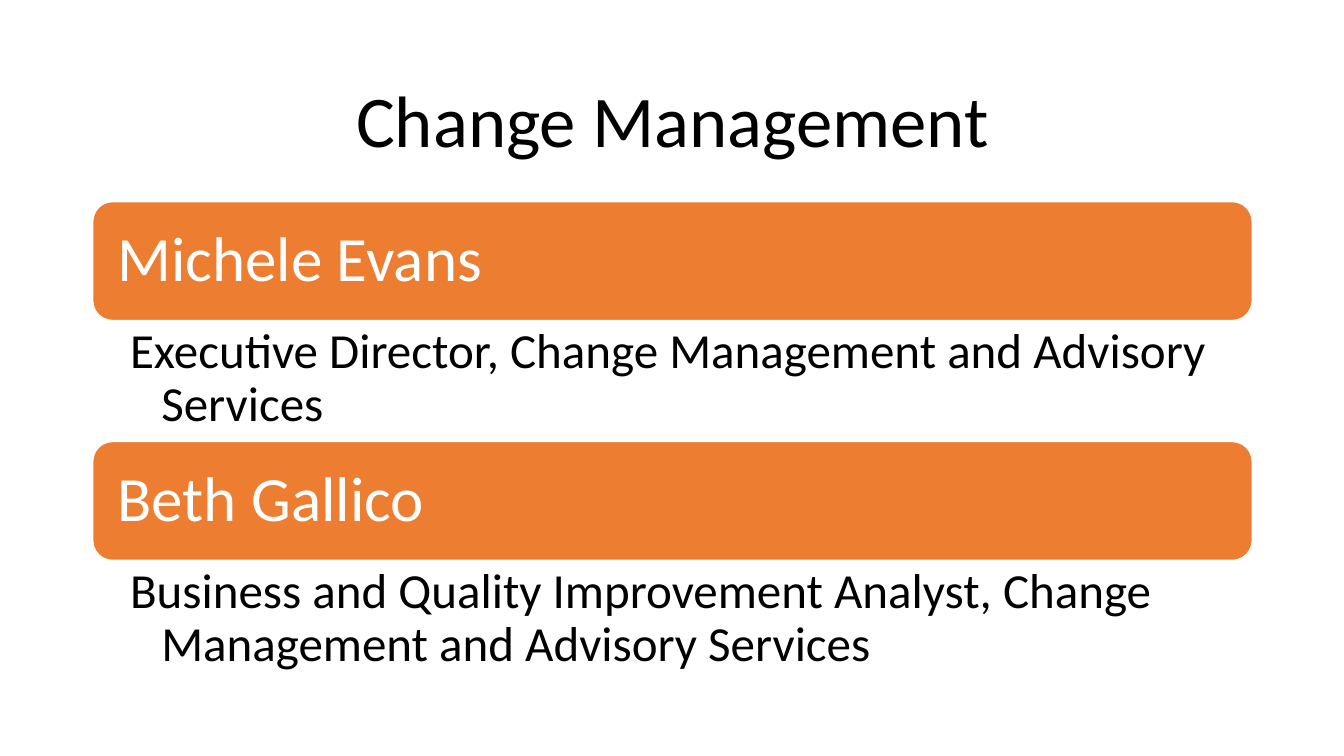
"""Build the Change Management team slide."""
from pptx import Presentation
from pptx import util as u
from pptx.dml.color import RGBColor
from pptx.enum import shapes, text

PX = 9144
FONT = "Calibri"
COLORS = {"text": "000000", "banner": "ED7D31", "white": "FFFFFF"}
LEFT, WIDTH = 92, 1150
TOP, BANNER_H, ROLE_H = 200, 118, 120
TEAM = [
    ("Michele Evans",
     "Executive Director, Change Management and Advisory Services"),
    ("Beth Gallico",
     "Business and Quality Improvement Analyst, Change Management and Advisory Services"),
]


def px(n):
    """Convert px to EMU."""
    return u.Emu(n * PX)


def rgb(name):
    """Look up a named colour."""
    return RGBColor.from_string(COLORS[name])


def write(sp, words, *, size, color="text", align=text.PP_ALIGN.LEFT,
          anchor=text.MSO_ANCHOR.MIDDLE, insets=(10, 5, 10, 5), hanging=0):
    """Fill a shape with one formatted paragraph."""
    tf = sp.text_frame
    tf.word_wrap = True
    tf.vertical_anchor = anchor
    tf.margin_left, tf.margin_top, tf.margin_right, tf.margin_bottom = map(px, insets)
    p = tf.paragraphs[0]
    p.alignment = align
    p.line_spacing = 0.9
    if hanging:
        p.level = 1
        pPr = p._p.get_or_add_pPr()
        pPr.set("marL", str(px(hanging)))
        pPr.set("indent", str(px(-hanging)))
    r = p.add_run()
    r.text = words
    r.font.name = FONT
    r.font.size = u.Pt(size)
    r.font.color.rgb = rgb(color)


def add_text(s, x, y, w, h, words, **fmt):
    """Add a text box."""
    write(s.shapes.add_textbox(px(x), px(y), px(w), px(h)), words, **fmt)


def add_banner(s, y, name):
    """Add a rounded banner with a person's name."""
    sp = s.shapes.add_shape(shapes.MSO_SHAPE.ROUNDED_RECTANGLE,
                            px(LEFT), px(y), px(WIDTH), px(BANNER_H))
    sp.shadow.inherit = False
    sp.fill.solid()
    sp.fill.fore_color.rgb = rgb("banner")
    sp.line.color.rgb = rgb("white")
    sp.line.width = u.Pt(1)
    write(sp, name, size=45, color="white", insets=(19, 19, 19, 19))


def main():
    """Build and save the slide."""
    prs = Presentation()
    prs.slide_width, prs.slide_height = px(1333), px(750)
    s = prs.slides.add_slide(prs.slide_layouts[6])
    add_text(s, LEFT, 61, WIDTH, 124, "Change Management",
             size=52, align=text.PP_ALIGN.CENTER)
    for i, (name, role) in enumerate(TEAM):
        y = TOP + i * (BANNER_H + ROLE_H)
        add_banner(s, y, name)
        add_text(s, LEFT, y + BANNER_H, WIDTH, ROLE_H, role, size=35,
                 anchor=text.MSO_ANCHOR.TOP, insets=(37, 6, 35, 6), hanging=31)
    prs.save("out.pptx")


if __name__ == "__main__":
    main()
